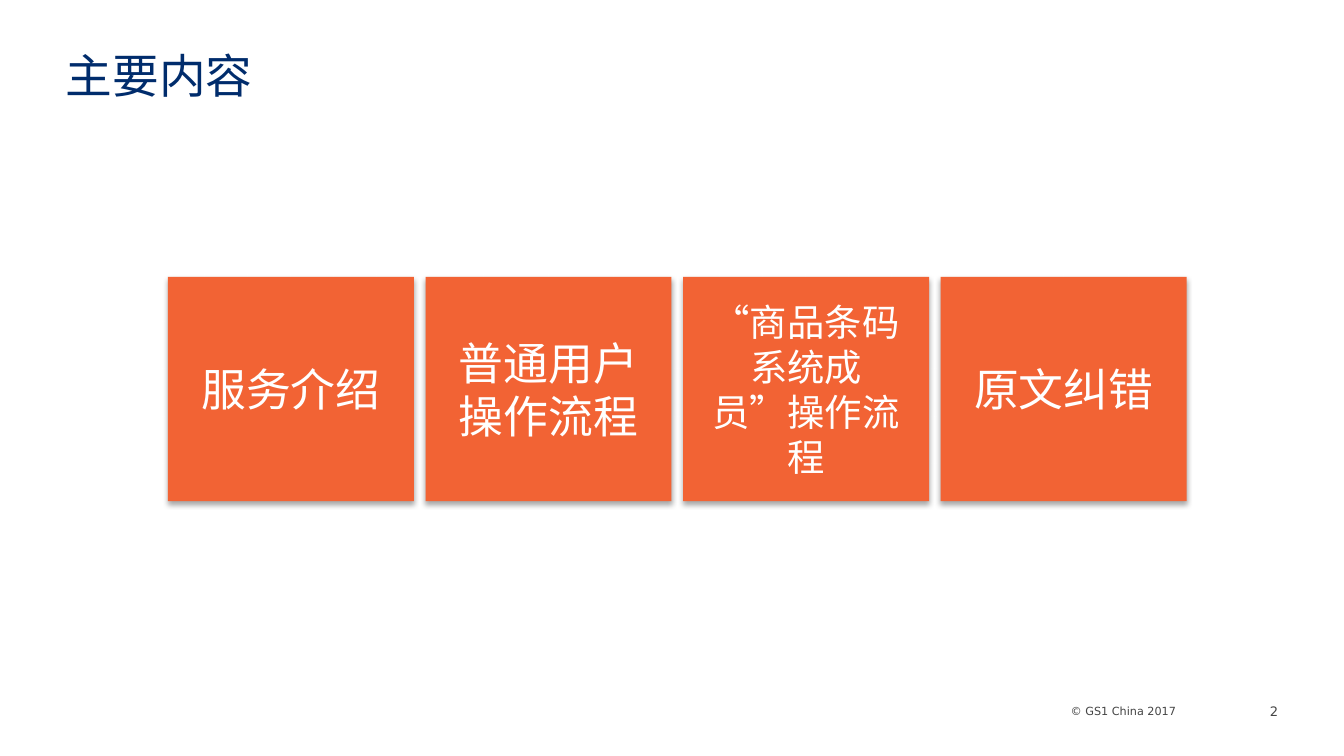
import pptx
import pptx.dml.color
import pptx.enum.shapes
import pptx.enum.text
import pptx.oxml
import pptx.oxml.ns
import pptx.util

Inches = pptx.util.Inches
Pt = pptx.util.Pt
RGBColor = pptx.dml.color.RGBColor
PP_ALIGN = pptx.enum.text.PP_ALIGN
MIDDLE = pptx.enum.text.MSO_ANCHOR.MIDDLE
TOP = pptx.enum.text.MSO_ANCHOR.TOP

NAVY = RGBColor(0x00, 0x2C, 0x6C)
ORANGE = RGBColor(0xF2, 0x63, 0x34)
WHITE = RGBColor(0xFF, 0xFF, 0xFF)
GREY = RGBColor(0x45, 0x45, 0x45)
CHINESE_FONT = "Noto Sans CJK SC"
FOOTER_FONT = "DejaVu Sans"

TITLE = "主要内容"
TOPICS = [
    ("服务介绍", 24),
    ("普通用户操作流程", 24),
    ("“商品条码系统成员”操作流程", 20),
    ("原文纠错", 24),
]
FOOTERS = [
    ("© GS1 China 2017", 6, (5.72, 5.24, 3.03, 0.11), TOP),
    ("2", 7, (9.24, 5.21, 0.27, 0.16), MIDDLE),
]
SLIDE_WIDTH = 10
SLIDE_HEIGHT = SLIDE_WIDTH * 9 / 16
GRID_LEFT, GRID_RIGHT, GRID_TOP = 1.25, 8.83, 2.06
TILE_WIDTH, TILE_HEIGHT = 1.83, 1.67
TILE_PITCH = (GRID_RIGHT - TILE_WIDTH - GRID_LEFT) / (len(TOPICS) - 1)


def write(shape, text, size, face, color, align, anchor, insets):
    """Fill a shape with one formatted paragraph."""
    frame = shape.text_frame
    frame.word_wrap = True
    frame.auto_size = pptx.enum.text.MSO_AUTO_SIZE.NONE
    frame.vertical_anchor = anchor
    (frame.margin_left, frame.margin_top,
     frame.margin_right, frame.margin_bottom) = map(Inches, insets)
    para = frame.paragraphs[0]
    para.text = text
    para.alignment = align
    font = para.font
    font.size, font.name, font.color.rgb = Pt(size), face, color
    latin = para._p.pPr.find(".//" + pptx.oxml.ns.qn("a:latin"))
    latin.addnext(pptx.oxml.parse_xml(
        f'<a:ea {pptx.oxml.ns.nsdecls("a")} typeface="{face}"/>'))


def add_shadow(shape):
    """Give a shape a soft shadow straight below it."""
    shape.shadow.inherit = False
    effects = shape._element.spPr.find(pptx.oxml.ns.qn("a:effectLst"))
    effects.append(pptx.oxml.parse_xml(
        f'<a:outerShdw {pptx.oxml.ns.nsdecls("a")} blurRad="{Pt(3.1)}" '
        f'dist="{Pt(1.8)}" dir="5400000" rotWithShape="0">'
        '<a:srgbClr val="000000"><a:alpha val="35000"/></a:srgbClr>'
        '</a:outerShdw>'))


def main():
    """Build the contents slide."""
    deck = pptx.Presentation()
    deck.slide_width, deck.slide_height = Inches(SLIDE_WIDTH), Inches(SLIDE_HEIGHT)
    page = deck.slides.add_slide(deck.slide_layouts[5])

    title = page.shapes.title
    title.left, title.top, title.width, title.height = map(
        Inches, (0.49, 0.19, 9.02, 0.74))
    write(title, TITLE, 25, CHINESE_FONT, NAVY, PP_ALIGN.LEFT, MIDDLE,
          (0, 0.05, 0.1, 0.05))

    for column, (topic, size) in enumerate(TOPICS):
        tile = page.shapes.add_shape(
            pptx.enum.shapes.MSO_SHAPE.RECTANGLE,
            Inches(GRID_LEFT + column * TILE_PITCH), Inches(GRID_TOP),
            Inches(TILE_WIDTH), Inches(TILE_HEIGHT))
        tile.fill.solid()
        tile.fill.fore_color.rgb = ORANGE
        tile.line.fill.background()
        add_shadow(tile)
        write(tile, topic, size, CHINESE_FONT, WHITE, PP_ALIGN.CENTER, MIDDLE,
              (0.1, 0.05, 0.1, 0.05))

    for text, size, place, anchor in FOOTERS:
        box = page.shapes.add_textbox(*map(Inches, place))
        write(box, text, size, FOOTER_FONT, GREY, PP_ALIGN.RIGHT, anchor,
              (0, 0, 0, 0))

    deck.save("out.pptx")


if __name__ == "__main__":
    main()
